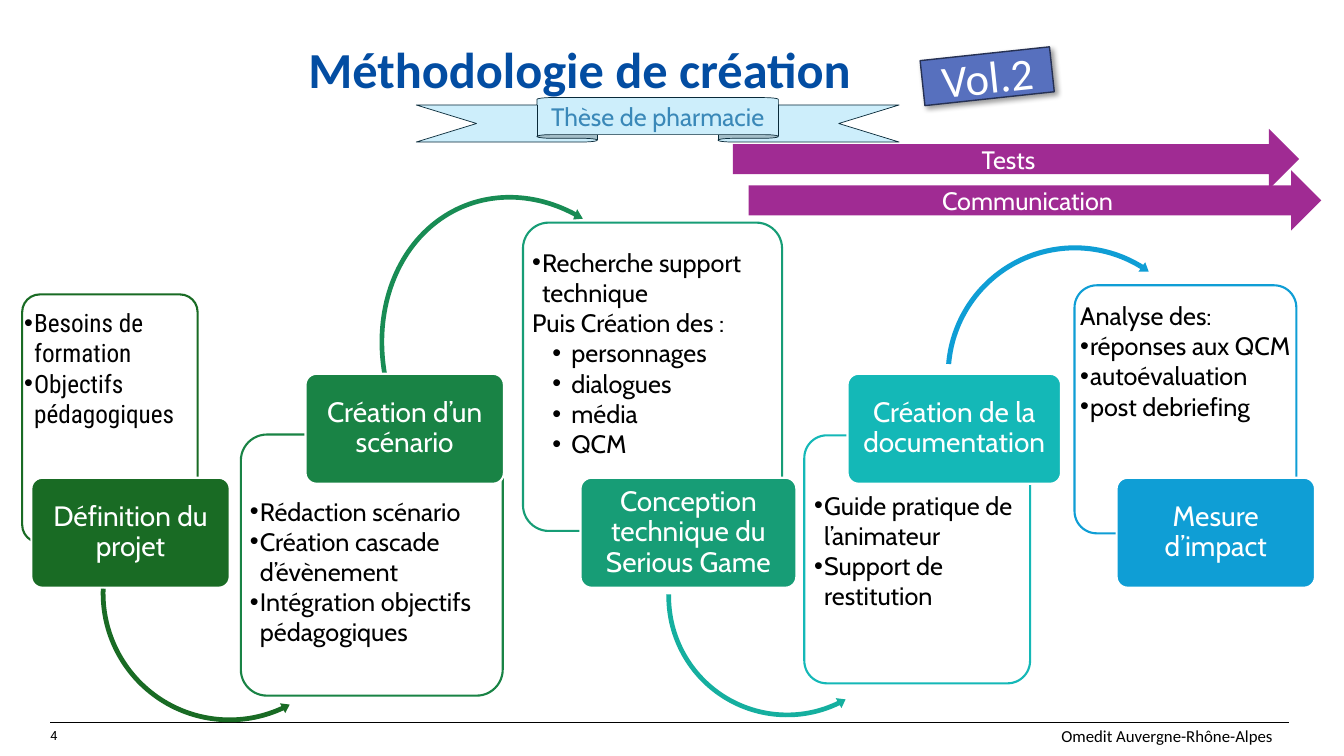
from lxml import etree
from pptx import Presentation
from pptx.dml.color import RGBColor
from pptx.enum.shapes import MSO_CONNECTOR, MSO_SHAPE
from pptx.enum.text import MSO_ANCHOR, PP_ALIGN
from pptx.oxml.ns import qn
from pptx.util import Cm, Pt

RECT, ROUND = MSO_SHAPE.RECTANGLE, MSO_SHAPE.ROUNDED_RECTANGLE
RIGHT_ARROW, RIBBON = MSO_SHAPE.RIGHT_ARROW, MSO_SHAPE.UP_RIBBON
UNDER, OVER = MSO_SHAPE.LEFT_CIRCULAR_ARROW, MSO_SHAPE.CIRCULAR_ARROW
STRAIGHT = MSO_CONNECTOR.STRAIGHT
TOP, MIDDLE, BOTTOM = MSO_ANCHOR.TOP, MSO_ANCHOR.MIDDLE, MSO_ANCHOR.BOTTOM
LEFT, CENTER, RIGHT = PP_ALIGN.LEFT, PP_ALIGN.CENTER, PP_ALIGN.RIGHT

BLACK = RGBColor(0x00, 0x00, 0x00)
WHITE = RGBColor(0xFF, 0xFF, 0xFF)
TITLE_BLUE = RGBColor(0x03, 0x4D, 0xA2)
BADGE_FILL = RGBColor(0x57, 0x70, 0xBE)
BADGE_LINE = RGBColor(0x26, 0x31, 0x53)
PURPLE = RGBColor(0xA0, 0x2B, 0x93)
RIBBON_FILL = RGBColor(0xCD, 0xEE, 0xFB)
RIBBON_LINE = RGBColor(0x09, 0x2A, 0x39)
RIBBON_TEXT = RGBColor(0x3A, 0x88, 0xB8)
FOREST = RGBColor(0x19, 0x6B, 0x24)
GREEN = RGBColor(0x19, 0x83, 0x45)
GREEN_ARC = RGBColor(0x18, 0x8C, 0x54)
JADE = RGBColor(0x17, 0x9D, 0x76)
JADE_ARC = RGBColor(0x15, 0xAF, 0x9F)
TEAL = RGBColor(0x14, 0xB8, 0xB7)
SKY = RGBColor(0x0F, 0x9E, 0xD5)

LABEL_HEIGHT = 2.77
BULLET_INDENTS = [(0.25, 0.25), (0.99, 0.48)]
LABEL_FRAME = {"margin_left": Cm(0.1), "margin_right": Cm(0.1),
               "margin_top": Cm(0.08), "margin_bottom": Cm(0.08)}

STEPS = [
    {"label": "Définition du projet", "color": FOREST, "font": "Roboto Condensed",
     "card": (0.56, 7.42, 4.42, 6.25), "tab": (0.79, 12.04, 5),
     "notes_at": (0.36, 7.62, 4.83, 3.33),
     "notes": [(0, "Besoins de formation"), (0, "Objectifs pédagogiques")],
     "arc": (UNDER, (2.46, 11.63, 6.65, 6.65), FOREST, 18,
             (18, 2179, 28305, 98616, 21))},
    {"label": "Création d’un scénario", "color": GREEN, "font": "Cabin",
     "card": (6.07, 10.95, 6.6, 6.58), "tab": (7.7, 9.42, 5),
     "notes_at": (6.05, 12.37, 6.91, 4.11),
     "notes": [(0, "Rédaction scénario"), (0, "Création cascade d’évènement"),
               (0, "Intégration objectifs pédagogiques")],
     "arc": (OVER, (9.58, 4.75, 7.37, 8.69), GREEN_ARC, 338.6,
             (16, 1958, 185894, 115362, 19))},
    {"label": "Conception technique du Serious Game", "color": JADE, "font": "Cabin",
     "card": (13.18, 5.61, 6.53, 7.77), "tab": (14.63, 12.04, 5.44),
     "notes_at": (13.16, 6.1, 6.91, 5.64),
     "notes": [(0, "Recherche support technique"), (None, "Puis Création des :"),
               (1, "personnages"), (1, "dialogues"), (1, "média"), (1, "QCM")],
     "arc": (UNDER, (16.71, 11.91, 6.25, 6.25), JADE_ARC, 17.7,
             (19, 2322, 27882, 98049, 23))},
    {"label": "Création de la documentation", "color": TEAL, "font": "Cabin",
     "card": (20.27, 10.97, 5.69, 6.25), "tab": (21.36, 9.42, 5.38),
     "notes_at": (20.27, 12.22, 6.17, 3.33),
     "notes": [(0, "Guide pratique de l’animateur"), (0, "Support de restitution")],
     "arc": (OVER, (23.75, 6.1, 6.68, 6.68), SKY, 346.1,
             (19, 2242, 189460, 119212, 22))},
    {"label": "Mesure d’impact", "color": SKY, "font": "Cabin",
     "card": (27.08, 7.19, 5.59, 6.25), "tab": (28.14, 12.04, 5),
     "notes_at": (26.97, 7.44, 5.94, 3.33),
     "notes": [(None, "Analyse des:"), (0, "réponses aux QCM"),
               (0, "autoévaluation"), (0, "post debriefing")],
     "arc": None},
]


def set_attrs(obj, values):
    """Set each attribute named in a dict."""
    for name, value in values.items():
        setattr(obj, name, value)


def add_sub(parent, tag, **attrs):
    """Append a DrawingML child element."""
    return etree.SubElement(parent, qn(tag), attrs)


def style(font, size, color, bold=False):
    """Bundle font values."""
    return {"name": font, "size": Pt(size), "color": color, "bold": bold}


def set_font(p, fmt):
    """Apply font values to a paragraph's runs."""
    for r in p.runs:
        set_attrs(r.font, {k: v for k, v in fmt.items() if k != "color"})
        r.font.color.rgb = fmt["color"]


def write(sp, text, fmt, align=CENTER, anchor=MIDDLE, spacing=None, frame=None):
    """Write one paragraph into a shape."""
    tf = sp.text_frame
    set_attrs(tf, {"word_wrap": True, "vertical_anchor": anchor, **(frame or {})})
    p = tf.paragraphs[0]
    p.text = text
    set_attrs(p, {"alignment": align, "line_spacing": spacing})
    set_font(p, fmt)


def add_text(s, box, text, fmt, **layout):
    """Add a text box with one paragraph."""
    write(s.shapes.add_textbox(*map(Cm, box)), text, fmt, **layout)


def add_figure(s, kind, box, fill, line=None, width=1.5, rotation=0, adjust=()):
    """Add a flat preset shape."""
    sp = s.shapes.add_shape(kind, *map(Cm, box))
    sp.shadow.inherit = False
    sp.rotation = rotation
    sp.fill.solid()
    sp.fill.fore_color.rgb = fill
    if line is None:
        sp.line.fill.background()
    else:
        sp.line.color.rgb = line
        sp.line.width = Pt(width)
    for i, value in enumerate(adjust):
        sp.adjustments[i] = value
    return sp


def add_notes(s, box, notes, fmt):
    """Add a text box of plain and bulleted paragraphs."""
    tf = s.shapes.add_textbox(*map(Cm, box)).text_frame
    tf.word_wrap = True
    for i, (level, text) in enumerate(notes):
        p = tf.add_paragraph() if i else tf.paragraphs[0]
        p.text = text
        if level is not None:
            p.level = level
            margin, hang = BULLET_INDENTS[level]
            pPr = p._p.get_or_add_pPr()
            pPr.set("marL", str(Cm(margin)))
            pPr.set("indent", str(-Cm(hang)))
            add_sub(pPr, "a:buFont", typeface="Arial")
            add_sub(pPr, "a:buChar", char="•")
        set_font(p, fmt)


def add_step(s, step):
    """Add a step's card, arc, label and notes."""
    color = step["color"]
    card = add_figure(s, ROUND, step["card"], WHITE, color, adjust=[0.1])
    add_sub(card.fill._xPr.find(".//" + qn("a:srgbClr")), "a:alpha", val="90000")
    if step["arc"]:
        kind, box, arc_color, rotation, adjust = step["arc"]
        add_figure(s, kind, box, arc_color, rotation=rotation,
                   adjust=[a / 1000 for a in adjust])
    tab = add_figure(s, ROUND, (*step["tab"], LABEL_HEIGHT), color, WHITE, adjust=[0.1])
    write(tab, step["label"], style("Cabin", 20, WHITE), spacing=0.9, frame=LABEL_FRAME)
    add_notes(s, step["notes_at"], step["notes"], style(step["font"], 18, BLACK))


def add_badge(s):
    """Add the tilted volume badge with its shadow."""
    sp = add_figure(s, RECT, (23.24, 1.35, 3.28, 1.14), BADGE_FILL, BADGE_LINE, 1, 353.9)
    effects = sp._element.spPr.find(qn("a:effectLst"))
    shadow = add_sub(effects, "a:outerShdw", blurRad=str(Pt(4)), dist=str(Pt(3)),
                     dir="2700000", algn="tl", rotWithShape="0")
    add_sub(add_sub(shadow, "a:srgbClr", val="000000"), "a:alpha", val="40000")
    write(sp, "Vol.2", style("Calibri", 32, WHITE))


def add_footer(s):
    """Add the footer rule, page number and organisation."""
    rule = s.shapes.add_connector(STRAIGHT, Cm(1.27), Cm(18.19), Cm(32.49), Cm(18.19))
    rule.line.color.rgb = BLACK
    rule.line.width = Pt(0.5)
    add_sub(rule._element.spPr, "a:effectLst")
    add_text(s, (1.02, 18.21, 10, 0.64), "4", style("Roboto", 9, BLACK),
             align=LEFT, anchor=TOP)
    add_text(s, (12.04, 18.21, 20.29, 0.71), "Omedit Auvergne-Rhône-Alpes",
             style("Calibri", 12, BLACK), align=RIGHT, anchor=BOTTOM)


def main():
    """Build the slide and save it."""
    prs = Presentation()
    set_attrs(prs, {"slide_width": Cm(33.87), "slide_height": Cm(19.05)})
    s = prs.slides.add_slide(prs.slide_layouts[6])
    add_footer(s)
    add_text(s, (7.52, 1.02, 24.49, 1.78), "Méthodologie de création",
             style("Calibri", 36, TITLE_BLUE, True), align=LEFT, anchor=TOP, spacing=0.9)
    add_badge(s)
    for step in STEPS:
        add_step(s, step)
    for text, box in [("Communication", (18.87, 4.29, 14.43, 1.52)),
                      ("Tests", (18.47, 3.25, 14.27, 1.52))]:
        write(add_figure(s, RIGHT_ARROW, box, PURPLE), text, style("Cabin", 18, WHITE))
    ribbon = add_figure(s, RIBBON, (10.49, 2.46, 12.17, 1.12), RIBBON_FILL, RIBBON_LINE, 0.5)
    write(ribbon, "Thèse de pharmacie", style("Cabin", 18, RIBBON_TEXT))
    prs.save("out.pptx")


if __name__ == "__main__":
    main()
